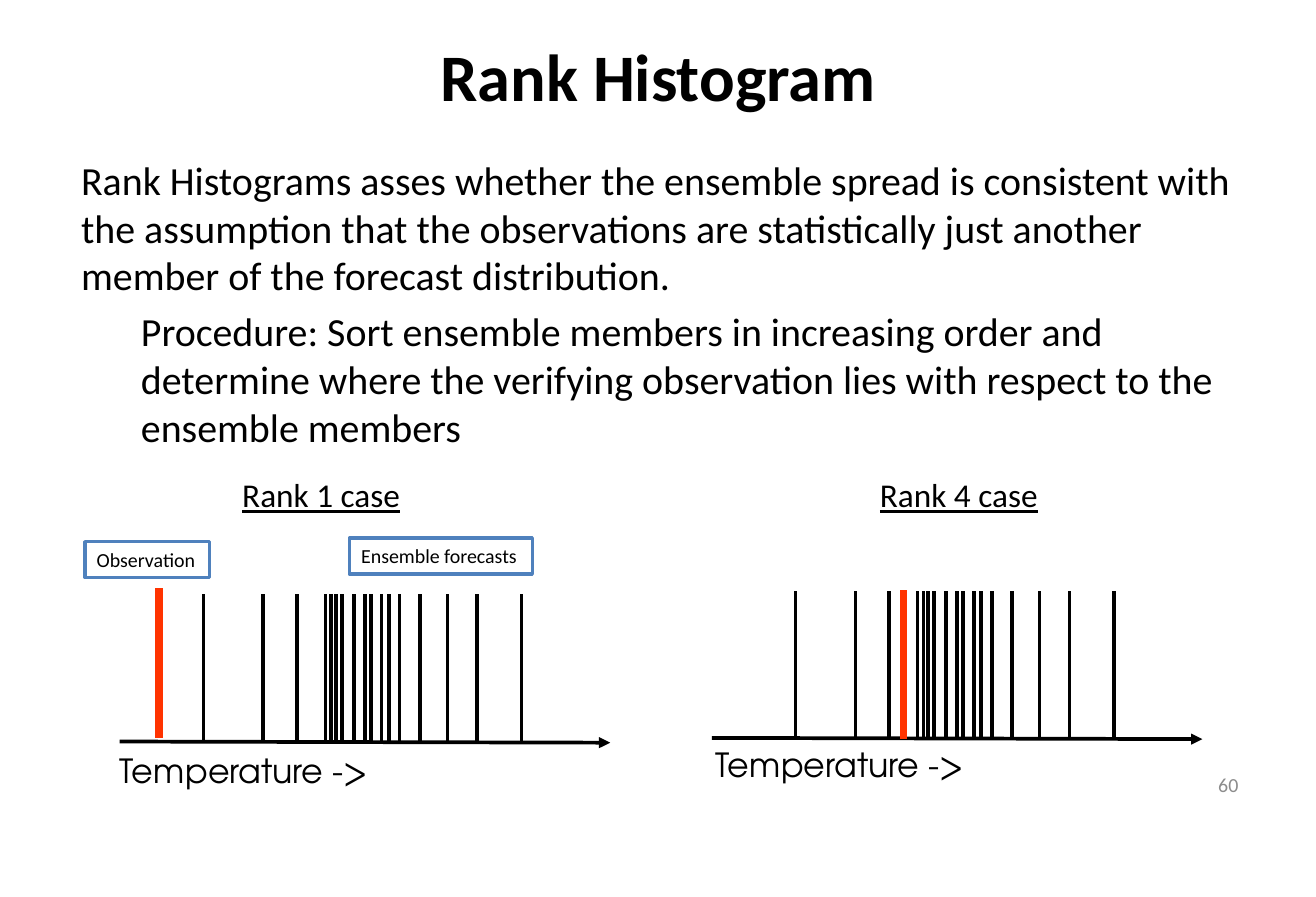
import dataclasses

import pptx
import pptx.dml.color
import pptx.enum.shapes
import pptx.enum.text
import pptx.oxml
import pptx.oxml.ns
import pptx.util

PX = 9144  # EMU per px, 100 px to the inch
ALIGN = pptx.enum.text.PP_ALIGN
ANCHOR = pptx.enum.text.MSO_ANCHOR
FIT = pptx.enum.text.MSO_AUTO_SIZE


@dataclasses.dataclass(frozen=True)
class Theme:
    black: str = "000000"
    white: str = "FFFFFF"
    grey: str = "8C8C8C"
    red: str = "FF3300"
    blue: str = "4F81BD"
    font: str = "Calibri"
    axis_font: str = "TeX Gyre Adventor"
    title: int = 40
    body: int = 24
    caption: int = 20
    small: int = 12
    thin: float = 2.25
    thick: float = 4.5
    border: float = 2


class Builder:
    def __init__(self, prs, theme):
        self.th = theme
        self.s = prs.slides.add_slide(prs.slide_layouts[5])

    def rgb(self, color):
        return pptx.dml.color.RGBColor.from_string(color)

    def place(self, sp, x, y, w, h):
        sp.left, sp.top, sp.width, sp.height = (v * PX for v in (x, y, w, h))

    def run(self, p, text, size, color=None, font=None, bold=False, underline=False):
        r = p.add_run()
        r.text = text
        r.font.size = pptx.util.Pt(size)
        r.font.name = font or self.th.font
        r.font.bold = bold
        r.font.underline = underline
        r.font.color.rgb = self.rgb(color or self.th.black)

    def title(self, text, x, y, w, h):
        sp = self.s.shapes.title
        self.place(sp, x, y, w, h)
        tf = sp.text_frame
        tf.vertical_anchor = ANCHOR.MIDDLE
        p = tf.paragraphs[0]
        p.alignment = ALIGN.CENTER
        self.run(p, text, self.th.title, bold=True)

    def text(self, text, x, y, w, h, size, align=ALIGN.LEFT, anchor=ANCHOR.TOP,
             wrap=True, before=0, parent=None, **style):
        sp = (parent or self.s).shapes.add_textbox(x * PX, y * PX, w * PX, h * PX)
        tf = sp.text_frame
        tf.word_wrap = wrap
        tf.vertical_anchor = anchor
        p = tf.paragraphs[0]
        p.alignment = align
        p.space_before = pptx.util.Pt(before)
        self.run(p, text, size, **style)

    def body(self, items, x, y, w, h):
        tf = self.s.shapes.add_textbox(x * PX, y * PX, w * PX, h * PX).text_frame
        tf.word_wrap = True
        for i, (level, text) in enumerate(items):
            p = tf.add_paragraph() if i else tf.paragraphs[0]
            p.level = level
            p.space_before = pptx.util.Pt(self.th.body * 0.2)
            pPr = p._p.get_or_add_pPr()
            pPr.set("marL", str(level * 50 * PX))
            pPr.set("indent", "0")
            self.run(p, text, self.th.body)

    def label(self, text, x, y, w, h):
        sp = self.s.shapes.add_shape(
            pptx.enum.shapes.MSO_SHAPE.RECTANGLE, x * PX, y * PX, w * PX, h * PX)
        sp.shadow.inherit = False
        sp.fill.solid()
        sp.fill.fore_color.rgb = self.rgb(self.th.white)
        sp.line.color.rgb = self.rgb(self.th.blue)
        sp.line.width = pptx.util.Pt(self.th.border)
        tf = sp.text_frame
        tf.word_wrap = False
        tf.auto_size = FIT.SHAPE_TO_FIT_TEXT
        tf.vertical_anchor = ANCHOR.TOP
        tf.paragraphs[0].alignment = ALIGN.LEFT
        self.run(tf.paragraphs[0], text, self.th.small)

    def line(self, x1, y1, x2, y2, color, width, arrow=False, parent=None):
        cn = (parent or self.s).shapes.add_connector(
            pptx.enum.shapes.MSO_CONNECTOR.STRAIGHT, x1 * PX, y1 * PX, x2 * PX, y2 * PX)
        cn.line.color.rgb = self.rgb(color)
        cn.line.width = pptx.util.Pt(width)
        if arrow:
            tail = pptx.oxml.parse_xml(
                f'<a:tailEnd {pptx.oxml.ns.nsdecls("a")} type="triangle"/>')
            cn.line._get_or_add_ln().append(tail)
        cn._element.spPr.append(
            pptx.oxml.parse_xml(f'<a:effectLst {pptx.oxml.ns.nsdecls("a")}/>'))

    def ensemble(self, x, base, members, text_x, text_y):
        """Temperature axis with one upright line per ensemble member."""
        th = self.th
        grp = self.s.shapes.add_group_shape()
        self.line(x, base, x + 410, base + 1, th.black, th.thin, arrow=True, parent=grp)
        for dx in members:
            self.line(x + dx, base, x + dx, base - 123, th.black, th.thin, parent=grp)
        self.text("Temperature ->", text_x, text_y, 361, 43, th.caption,
                  before=th.caption * 0.2, font=th.axis_font, parent=grp)

    def observation(self, x, top):
        self.line(x, top + 125, x, top, self.th.red, self.th.thick)


# Member positions along the axis, shared by both cases
MEMBERS = (70, 120, 148, 172, 177, 181, 186, 196, 205, 210, 219, 225,
           234, 251, 274, 299, 336)
BODY = (
    (0, "Rank Histograms asses whether the ensemble spread is consistent with the "
        "assumption that the observations are statistically just another member of "
        "the forecast distribution."),
    (1, "Procedure: Sort ensemble members in increasing order and determine where the "
        "verifying observation lies with respect to the ensemble members"),
)


def main():
    prs = pptx.Presentation()
    prs.slide_width, prs.slide_height = 1100 * PX, 750 * PX
    th = Theme()
    b = Builder(prs, th)

    # Title, body and page number
    b.title("Rank Histogram", 55, 0, 990, 125)
    b.body(BODY, 58, 125, 990, 267)
    b.text("60", 788, 636, 257, 40, th.small, ALIGN.RIGHT, ANCHOR.MIDDLE, color=th.grey)

    # Case captions
    for text, x in (("Rank 1 case", 192), ("Rank 4 case", 725)):
        b.text(text, x, 392, 153, 44, th.caption, ALIGN.CENTER, wrap=False, underline=True)

    # Rank 1: observation below every member
    b.ensemble(100, 620, MEMBERS, 90, 622)
    b.observation(133, 492)

    # Rank 4: observation after the third member
    b.ensemble(595, 617, MEMBERS, 588, 617)
    b.observation(755, 493)

    # Labels
    b.label("Ensemble forecasts", 292, 450, 153, 30)
    b.label("Observation", 71, 453, 104, 30)

    prs.save("out.pptx")


if __name__ == "__main__":
    main()
